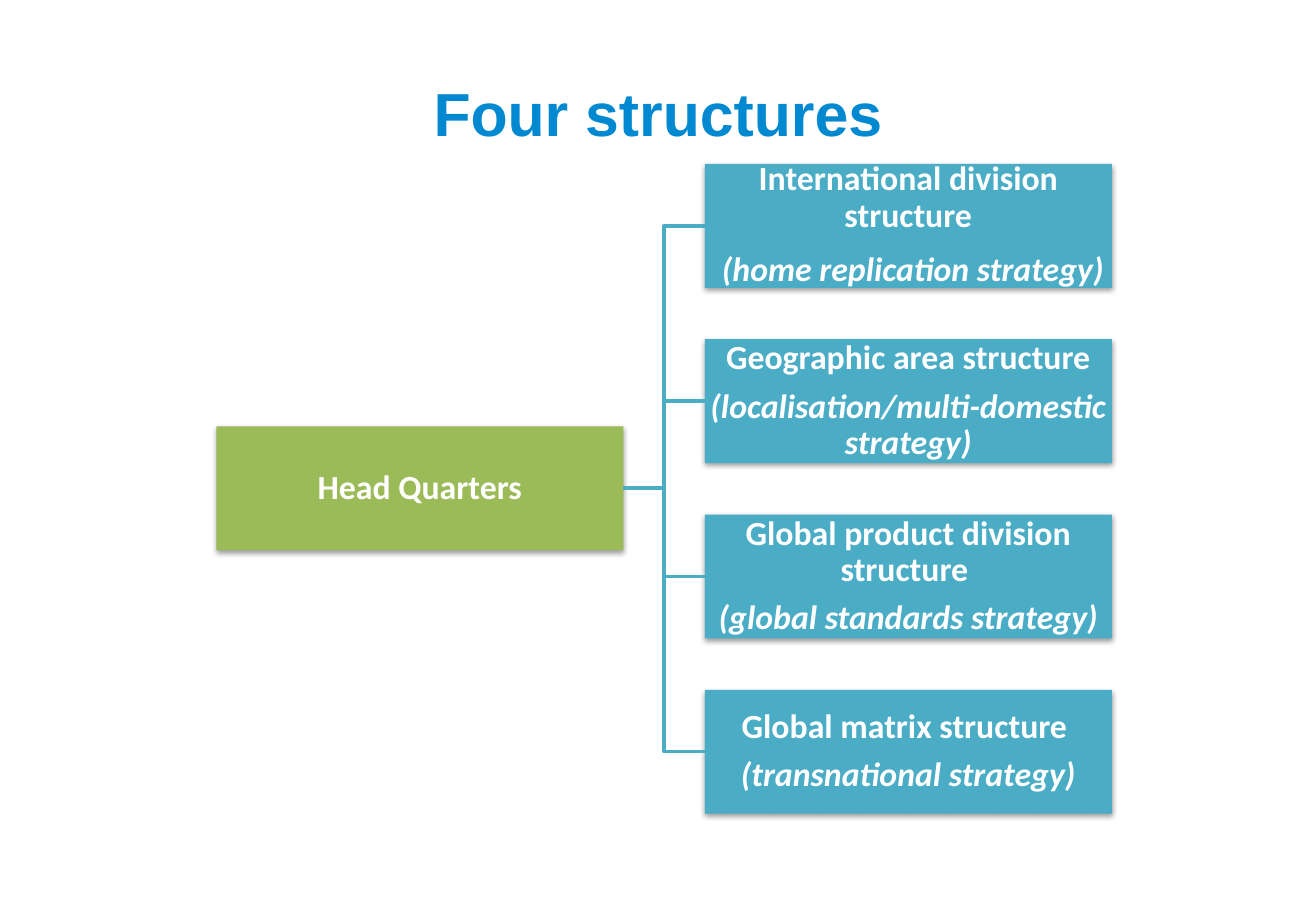
import pptx
import pptx.dml.color
import pptx.enum.shapes
import pptx.enum.text
import pptx.oxml
import pptx.oxml.ns
import pptx.util
from pptx.util import Inches

COLORS = {"title": "0089D0", "head": "9BBB59", "unit": "4BACC6", "text": "FFFFFF", "shadow": "000000"}
UNITS = [
    ("International division structure", "(home replication strategy)"),
    ("Geographic area structure", "(localisation/multi-domestic strategy)"),
    ("Global product division structure ", "(global standards strategy)"),
    ("Global matrix structure ", "(transnational strategy)"),
]
BOX_WIDTH, BOX_HEIGHT = 3.35, 1.02
HEAD_LEFT, HEAD_TOP = 1.78, 3.51
UNIT_LEFT, UNIT_TOP, UNIT_PITCH = 5.8, 1.35, 1.443


def rgb(name):
    return pptx.dml.color.RGBColor.from_string(COLORS[name])


def add_text(paragraph, text, size=20, font="Calibri", color="text", italic=False):
    paragraph.alignment = pptx.enum.text.PP_ALIGN.CENTER
    run = paragraph.add_run()
    run.text = text
    run.font.size = pptx.util.Pt(size)
    run.font.name = font
    run.font.bold = True
    run.font.italic = italic
    run.font.color.rgb = rgb(color)


class Chart:
    def __init__(self, slide):
        self.slide = slide

    def title(self, text):
        title = self.slide.shapes.title
        title.left, title.top = Inches(0.54), Inches(0.3)
        title.width, title.height = Inches(9.75), Inches(1.25)
        title.text_frame.vertical_anchor = pptx.enum.text.MSO_ANCHOR.MIDDLE
        add_text(title.text_frame.paragraphs[0], text, size=36, font="Arial", color="title")

    def box(self, left, top, fill, name, strategy=None):
        shape = self.slide.shapes.add_shape(
            pptx.enum.shapes.MSO_SHAPE.RECTANGLE,
            Inches(left), Inches(top), Inches(BOX_WIDTH), Inches(BOX_HEIGHT))
        shape.fill.solid()
        shape.fill.fore_color.rgb = rgb(fill)
        shape.line.fill.background()
        self.shadow(shape)
        frame = shape.text_frame
        frame.word_wrap = True
        frame.vertical_anchor = pptx.enum.text.MSO_ANCHOR.MIDDLE
        frame.margin_left = frame.margin_right = Inches(0.01)
        frame.margin_top = frame.margin_bottom = Inches(0.01)
        add_text(frame.paragraphs[0], name)
        if strategy:
            paragraph = frame.add_paragraph()
            if strategy == UNITS[0][1]:
                add_text(paragraph, " ", size=24)
            add_text(paragraph, strategy, italic=True)
        for paragraph in frame.paragraphs:
            paragraph.line_spacing = 0.9
            paragraph.space_after = pptx.util.Pt(7)
        return shape

    def shadow(self, shape):
        shape.shadow.inherit = False
        effects = shape._element.spPr.find(pptx.oxml.ns.qn("a:effectLst"))
        effects.append(pptx.oxml.parse_xml(
            f'<a:outerShdw {pptx.oxml.ns.nsdecls("a")} blurRad="{pptx.util.Pt(3.1)}" '
            f'dist="{pptx.util.Pt(1.6)}" dir="5400000" rotWithShape="0">'
            f'<a:srgbClr val="{COLORS["shadow"]}"><a:alpha val="38000"/></a:srgbClr></a:outerShdw>'))

    def branch(self, head, unit):
        connector = self.slide.shapes.add_connector(
            pptx.enum.shapes.MSO_CONNECTOR.ELBOW,
            head.left + head.width, head.top + head.height // 2,
            unit.left, unit.top + unit.height // 2)
        connector.begin_connect(head, 3)
        connector.end_connect(unit, 1)
        connector.line.color.rgb = rgb("unit")
        connector.line.width = pptx.util.Pt(2)
        connector._element.spPr.append(
            pptx.oxml.parse_xml(f'<a:effectLst {pptx.oxml.ns.nsdecls("a")}/>'))


def main():
    presentation = pptx.Presentation()
    presentation.slide_width, presentation.slide_height = Inches(10.83), Inches(7.5)
    chart = Chart(presentation.slides.add_slide(presentation.slide_layouts[5]))
    chart.title("Four structures")
    head = chart.box(HEAD_LEFT, HEAD_TOP, "head", "Head Quarters")
    for index, (name, strategy) in enumerate(UNITS):
        unit = chart.box(UNIT_LEFT, UNIT_TOP + index * UNIT_PITCH, "unit", name, strategy)
        chart.branch(head, unit)
    presentation.save("out.pptx")


if __name__ == "__main__":
    main()
